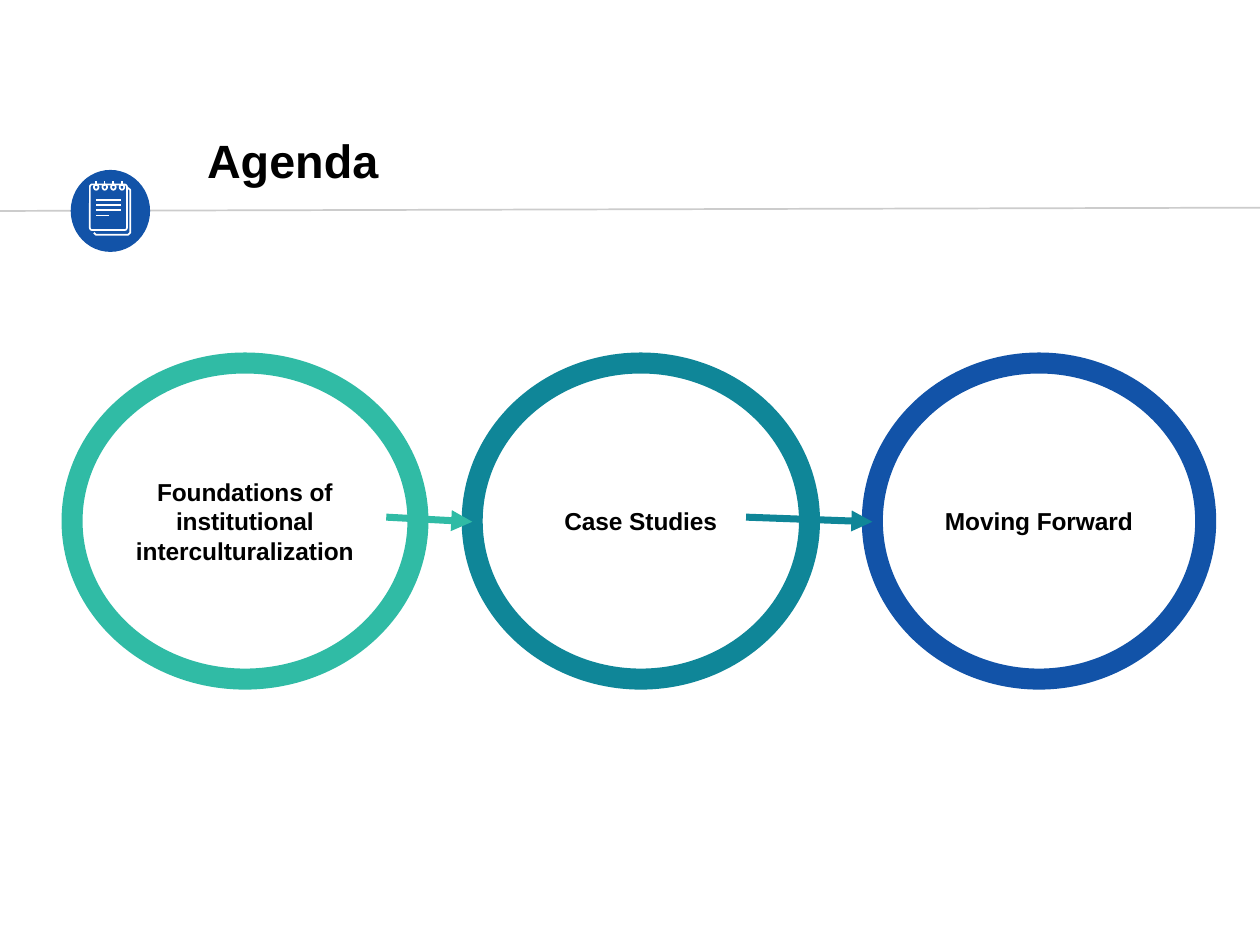
from dataclasses import dataclass

from lxml.etree import SubElement
from pptx import Presentation
from pptx.dml.color import RGBColor
from pptx.enum.shapes import MSO_CONNECTOR, MSO_SHAPE
from pptx.enum.text import MSO_ANCHOR, MSO_AUTO_SIZE, PP_ALIGN
from pptx.oxml.ns import qn
from pptx.shapes.autoshape import Shape
from pptx.shapes.connector import Connector
from pptx.slide import Slide
from pptx.util import Cm, Pt

COLOURS = {
    "green": "30BBA5",
    "teal": "0F8698",
    "blue": "1253A8",
    "rule": "CCCCCC",
    "text": "000000",
    "icon": "FFFFFF",
}
FONT = "Arial"
INSET = 0.18
CIRCLE_TOP, CIRCLE_HEIGHT = 5.49, 4.78
ARROW_START_Y, ARROW_END_Y = 7.82, 7.89


@dataclass(frozen=True)
class Topic:
    """A ringed agenda item, measured in centimetres."""
    text: str
    left: float
    width: float
    colour: str


@dataclass(frozen=True)
class Arrow:
    """An arrow leading to the next agenda item."""
    start: float
    end: float
    colour: str


TOPICS = [
    Topic("Foundations of institutional interculturalization", 1.09, 5.23, "green"),
    Topic("Case Studies", 7.14, 5.1, "teal"),
    Topic("Moving Forward", 13.19, 5.04, "blue"),
]
ARROWS = [Arrow(5.84, 7.14, "green"), Arrow(11.28, 13.19, "teal")]


def rgb(name: str) -> RGBColor:
    """Look up a named colour."""
    return RGBColor.from_string(COLOURS[name])


def write(shape: Shape, text: str, size: float, alignment: PP_ALIGN) -> None:
    """Put one bold run into a shape."""
    frame = shape.text_frame
    frame.word_wrap = True
    frame.auto_size = MSO_AUTO_SIZE.NONE
    frame.vertical_anchor = MSO_ANCHOR.MIDDLE
    frame.margin_left = frame.margin_right = Cm(INSET)
    frame.margin_top = frame.margin_bottom = Cm(INSET)
    paragraph = frame.paragraphs[0]
    paragraph.alignment = alignment
    run = paragraph.add_run()
    run.text = text
    run.font.name = FONT
    run.font.size = Pt(size)
    run.font.bold = True
    run.font.color.rgb = rgb("text")


def outline(shape: Shape, colour: str, weight: float) -> None:
    """Leave a shape hollow with a coloured outline."""
    shape.shadow.inherit = False
    shape.fill.background()
    shape.line.color.rgb = rgb(colour)
    shape.line.width = Pt(weight)


def add_preset(slide: Slide, kind: MSO_SHAPE, left: float, top: float,
               width: float, height: float) -> Shape:
    """Add a preset shape placed in centimetres."""
    return slide.shapes.add_shape(kind, Cm(left), Cm(top), Cm(width), Cm(height))


def add_line(slide: Slide, start: tuple[float, float], end: tuple[float, float],
             colour: str, weight: float = 0.75) -> Connector:
    """Add a straight line without a shadow."""
    line = slide.shapes.add_connector(
        MSO_CONNECTOR.STRAIGHT, Cm(start[0]), Cm(start[1]), Cm(end[0]), Cm(end[1]))
    line.line.color.rgb = rgb(colour)
    line.line.width = Pt(weight)
    SubElement(line._element.spPr, qn("a:effectLst"))
    return line


def add_topic(slide: Slide, topic: Topic) -> None:
    """Draw one ringed agenda item."""
    circle = add_preset(slide, MSO_SHAPE.OVAL, topic.left, CIRCLE_TOP,
                        topic.width, CIRCLE_HEIGHT)
    outline(circle, topic.colour, 9)
    write(circle, topic.text, 10.5, PP_ALIGN.CENTER)


def add_arrow(slide: Slide, arrow: Arrow) -> None:
    """Draw one arrow between agenda items."""
    line = add_line(slide, (arrow.start, ARROW_START_Y), (arrow.end, ARROW_END_Y),
                    arrow.colour, 3)
    SubElement(line.line._get_or_add_ln(), qn("a:tailEnd"), type="triangle")


def add_notepad(slide: Slide) -> None:
    """Draw the spiral notepad icon."""
    corners = [(1.42, 3.52), (1.45, 3.55), (1.94, 3.55), (1.97, 3.52),
               (1.97, 2.87), (1.93, 2.84)]
    points = [(Cm(x), Cm(y)) for x, y in corners]
    builder = slide.shapes.build_freeform(*points[0])
    builder.add_line_segments(points[1:], close=False)
    outline(builder.convert_to_shape(), "icon", 0.75)
    page = add_preset(slide, MSO_SHAPE.ROUNDED_RECTANGLE, 1.36, 2.79, 0.56, 0.69)
    page.adjustments[0] = 0.06
    outline(page, "icon", 0.75)
    for index, width in enumerate([0.38, 0.38, 0.38, 0.2]):
        y = 3.02 + 0.08 * index
        add_line(slide, (1.45, y), (1.45 + width, y), "icon")
    for index in range(4):
        x = 1.45 + 0.13 * index
        ring = add_preset(slide, MSO_SHAPE.OVAL, x - 0.03, 2.79, 0.07, 0.08)
        outline(ring, "icon", 0.75)
        add_line(slide, (x, 2.74), (x, 2.82), "icon")


def main() -> None:
    """Build the agenda slide."""
    presentation = Presentation()
    presentation.slide_width, presentation.slide_height = Cm(19.05), Cm(14.29)
    slide = presentation.slides.add_slide(presentation.slide_layouts[5])

    add_line(slide, (0, 3.19), (19.05, 3.14), "rule")
    badge = add_preset(slide, MSO_SHAPE.OVAL, 1.07, 2.57, 1.2, 1.24)
    badge.shadow.inherit = False
    badge.fill.solid()
    badge.fill.fore_color.rgb = rgb("blue")
    badge.line.fill.background()

    title = slide.shapes.title
    title.left, title.top, title.width, title.height = Cm(2.95), Cm(1.96), Cm(8.08), Cm(0.91)
    write(title, "Agenda", 20, PP_ALIGN.LEFT)

    for topic in TOPICS:
        add_topic(slide, topic)
    for arrow in ARROWS:
        add_arrow(slide, arrow)
    add_notepad(slide)
    presentation.save("out.pptx")


if __name__ == "__main__":
    main()
